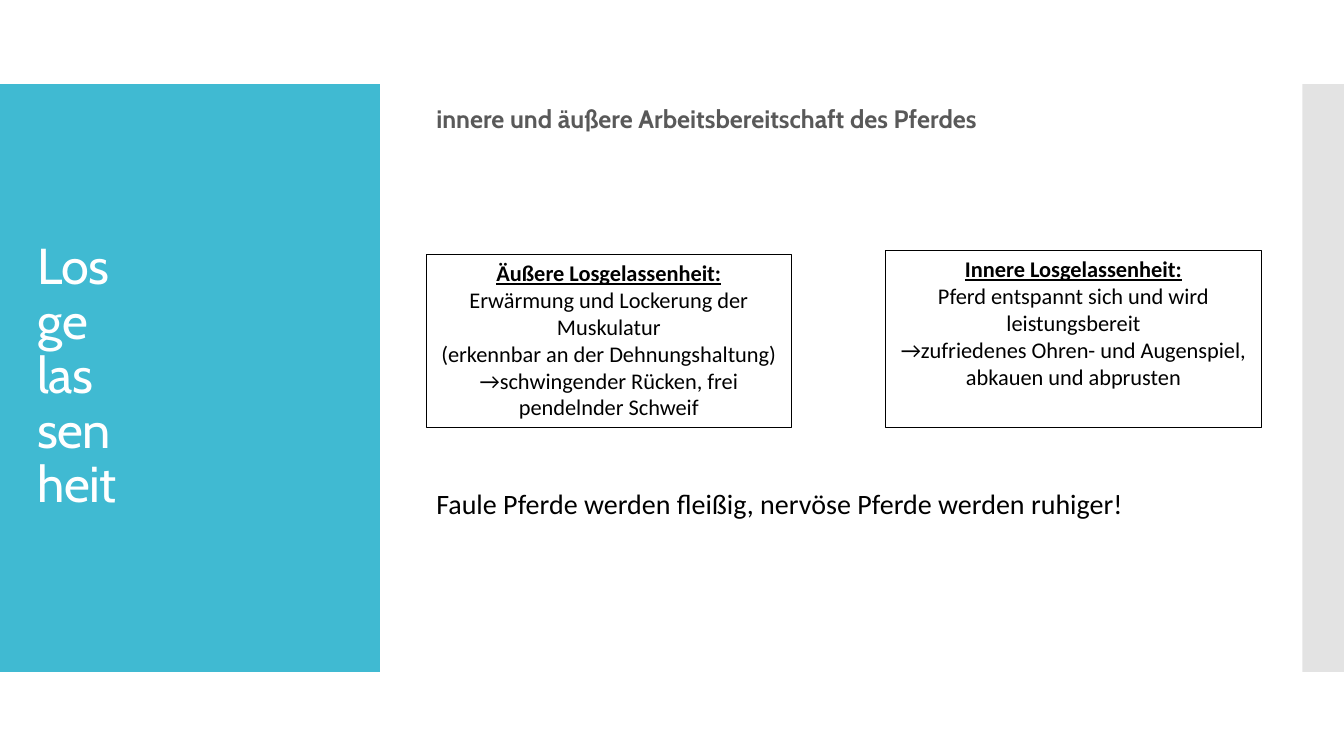
from lxml import etree
from pptx import Presentation
from pptx import util as u
from pptx.dml.color import RGBColor
from pptx.enum import shapes, text
from pptx.oxml.ns import qn

TEAL = RGBColor(0x40, 0xBA, 0xD2)
GRAY = RGBColor(0xC8, 0xC8, 0xC8)
DARK_GRAY = RGBColor(0x59, 0x59, 0x59)
WHITE = RGBColor(0xFF, 0xFF, 0xFF)
BLACK = RGBColor(0x00, 0x00, 0x00)

SLIDE_WIDTH, SLIDE_HEIGHT = 960, 540
BAND_TOP, BAND_HEIGHT = 60, 420
BODY_LEFT, BODY_WIDTH = 304.56, 576


class SlideBuilder:
    """Holds the style and the current slide; all lengths are points."""

    heading_font = "Cabin"
    body_font = "Calibri"
    box_size = 16

    def __init__(self, slide):
        self.slide = slide

    def rectangle(self, left, top, width, height, fill, line=None, opacity=None):
        shape = self.slide.shapes.add_shape(
            shapes.MSO_SHAPE.RECTANGLE,
            u.Pt(left), u.Pt(top), u.Pt(width), u.Pt(height))
        shape.shadow.inherit = False
        shape.fill.solid()
        shape.fill.fore_color.rgb = fill
        if line is None:
            shape.line.fill.background()
        else:
            shape.line.color.rgb = line
            shape.line.width = u.Pt(0.75)
        if opacity is not None:
            color = shape._element.spPr.find(".//" + qn("a:srgbClr"))
            etree.SubElement(color, qn("a:alpha")).set("val", str(opacity * 1000))
        return shape

    def style(self, paragraph, name, size, color, bold=False, underline=False):
        font = paragraph.font
        font.name = name
        font.size = u.Pt(size)
        font.color.rgb = color
        font.bold = bold
        font.underline = underline

    def text_box(self, left, top, width, height, content, name, size, color,
                 bold=False, anchor=text.MSO_ANCHOR.TOP):
        shape = self.slide.shapes.add_textbox(
            u.Pt(left), u.Pt(top), u.Pt(width), u.Pt(height))
        frame = shape.text_frame
        frame.word_wrap = True
        frame.vertical_anchor = anchor
        paragraph = frame.paragraphs[0]
        paragraph.text = content
        self.style(paragraph, name, size, color, bold)
        return paragraph

    def definition_box(self, left, top, width, height, lines):
        """Framed box whose first line is an underlined heading."""
        frame = self.rectangle(left, top, width, height, WHITE, BLACK).text_frame
        frame.word_wrap = True
        frame.vertical_anchor = text.MSO_ANCHOR.TOP
        frame.text = "\n".join(lines)
        for index, paragraph in enumerate(frame.paragraphs):
            is_heading = index == 0
            paragraph.alignment = text.PP_ALIGN.CENTER
            self.style(paragraph, self.body_font, self.box_size, BLACK,
                       is_heading, is_heading)


def main():
    presentation = Presentation()
    presentation.slide_width = u.Pt(SLIDE_WIDTH)
    presentation.slide_height = u.Pt(SLIDE_HEIGHT)
    builder = SlideBuilder(
        presentation.slides.add_slide(presentation.slide_layouts[6]))

    # Side bands
    builder.rectangle(0, BAND_TOP, 271.4, BAND_HEIGHT, TEAL)
    builder.rectangle(930.3, BAND_TOP, 29.7, BAND_HEIGHT, GRAY, opacity=50)

    # Title, one syllable per line
    title = builder.text_box(
        20, 88.5, 232, 362, "Los\nge\nlas\nsen\nheit",
        builder.heading_font, 36, WHITE, anchor=text.MSO_ANCHOR.MIDDLE)
    title.line_spacing = 0.9
    title.font._element.set("spc", "-60")

    # Opening and closing statements
    builder.text_box(
        BODY_LEFT, 70.4, BODY_WIDTH, 30,
        "innere und äußere Arbeitsbereitschaft des Pferdes",
        builder.heading_font, 18, DARK_GRAY, bold=True)
    builder.text_box(
        BODY_LEFT, 344, BODY_WIDTH, 32,
        "Faule Pferde werden fleißig, nervöse Pferde werden ruhiger!",
        builder.body_font, 20, BLACK)

    # Outer and inner suppleness
    builder.definition_box(BODY_LEFT, 181.6, 260.8, 123.8, [
        "Äußere Losgelassenheit:",
        "Erwärmung und Lockerung der Muskulatur",
        "(erkennbar an der Dehnungshaltung)",
        "→schwingender Rücken, frei pendelnder Schweif",
    ])
    builder.definition_box(632.5, 178.8, 268.6, 126.4, [
        "Innere Losgelassenheit:",
        "Pferd entspannt sich und wird leistungsbereit",
        "→zufriedenes Ohren- und Augenspiel, abkauen und abprusten",
    ])

    presentation.save("out.pptx")


if __name__ == "__main__":
    main()
